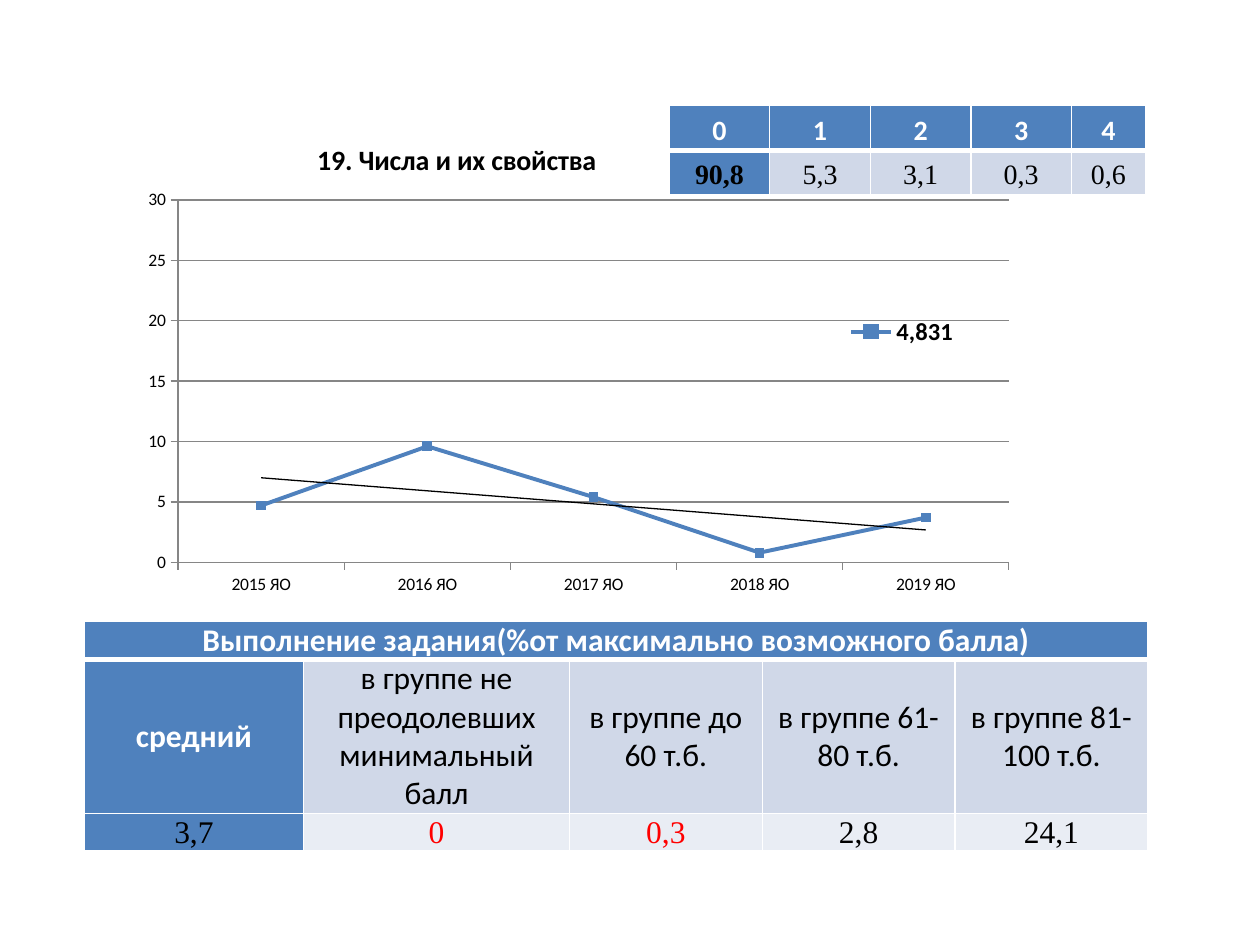
from pptx import Presentation
from pptx.chart.data import CategoryChartData
from pptx.dml.color import RGBColor
from pptx.enum.chart import XL_CHART_TYPE as ChartType
from pptx.enum.chart import XL_LEGEND_POSITION as LegendPosition
from pptx.enum.chart import XL_MARKER_STYLE as MarkerStyle
from pptx.enum.chart import XL_TICK_MARK as TickMark
from pptx.enum.text import MSO_ANCHOR as Anchor
from pptx.enum.text import PP_ALIGN as Align
from pptx.oxml import parse_xml
from pptx.oxml.ns import nsdecls, qn
from pptx.util import Cm, Pt

BLUE, PALE, PALER = "4F81BD", "D0D8E8", "E9EDF4"
WHITE, BLACK, RED, GREY = "FFFFFF", "000000", "FF0000", "868686"
SANS, SERIF = "Calibri", "Times New Roman"


def color(value):
    return RGBColor.from_string(value)


def set_font(font, fill, **values):
    for name, value in values.items():
        setattr(font, name, value)
    font.color.rgb = color(fill)


def set_borders(cell, bottom):
    """White edges, 1 pt wide except for the bottom one."""
    properties = cell._tc.get_or_add_tcPr()
    for index, (side, width) in enumerate(zip("LRTB", (1, 1, 1, bottom))):
        properties.insert(index, parse_xml(
            f'<a:ln{side} {nsdecls("a")} w="{Pt(width)}"><a:solidFill>'
            f'<a:srgbClr val="{WHITE}"/></a:solidFill></a:ln{side}>'))


def fill_cell(cell, text, fill, font, margins, spacing=None, bottom=1):
    cell.fill.solid()
    cell.fill.fore_color.rgb = color(fill)
    set_borders(cell, bottom)
    cell.vertical_anchor = Anchor.MIDDLE
    sides = ("left", "top", "right", "bottom")
    for side, margin in zip(sides, margins):
        setattr(cell, f"margin_{side}", Cm(margin))
    paragraph = cell.text_frame.paragraphs[0]
    paragraph.alignment = Align.CENTER
    if spacing:
        paragraph.line_spacing = spacing
    if text:
        run = paragraph.add_run()
        run.text = text
        set_font(run.font, **font)


def add_grid(slide, box, widths, heights):
    shape = slide.shapes.add_table(
        len(heights), len(widths), *[Cm(length) for length in box])
    table = shape.table
    for column, width in zip(table.columns, widths):
        column.width = Cm(width)
    for row, height in zip(table.rows, heights):
        row.height = Cm(height)
    return table


def add_score_table(slide, box):
    """Share of pupils for each number of points."""
    width, height = box[2:]
    last = 1.49
    table = add_grid(slide, box, [(width - last) / 4] * 4 + [last],
                     [height / 2] * 2)
    style = dict(margins=(0.18, 0, 0.18, 0), spacing=1.15)
    shares = ["90,8", "5,3", "3,1", "0,3", "0,6"]
    for index, share in enumerate(shares):
        first = index == 0
        fill_cell(table.cell(0, index), str(index), BLUE,
                  dict(fill=WHITE, name=SANS, size=Pt(16), bold=True),
                  bottom=3, **style)
        fill_cell(table.cell(1, index), share, BLUE if first else PALE,
                  dict(fill=BLACK, name=SERIF, size=Pt(16), bold=first),
                  **style)


def add_group_table(slide, box):
    """Result of the task in each group of pupils."""
    width, height = box[2:]
    line, first, second = 0.75, 4.42, 5.36
    others = [(width - first - second) / 3] * 3
    table = add_grid(slide, box, [first, second] + others,
                     [line, height - 2 * line, line])
    groups = [
        ("средний", "3,7", BLACK),
        ("в группе не преодолевших минимальный балл", "0", RED),
        ("в группе до 60 т.б.", "0,3", RED),
        ("в группе 61-80 т.б.", "2,8", BLACK),
        ("в группе 81-100 т.б.", "24,1", BLACK),
    ]
    heading = "Выполнение задания(%от максимально возможного балла)"
    wide, narrow = (0.18, 0, 0.18, 0), (0.02, 0.02, 0.02, 0)
    table.cell(0, 0).merge(table.cell(0, 4))
    for index, (group, result, result_color) in enumerate(groups):
        first = index == 0
        fill_cell(table.cell(0, index), heading if first else "", BLUE,
                  dict(fill=WHITE, name=SANS, size=Pt(18), bold=True),
                  wide, bottom=3)
        fill_cell(table.cell(1, index), group, BLUE if first else PALE,
                  dict(fill=WHITE if first else BLACK, name=SANS,
                       size=Pt(18), bold=first), wide)
        fill_cell(table.cell(2, index), result, BLUE if first else PALER,
                  dict(fill=result_color, name=SERIF, size=Pt(18),
                       bold=False), narrow)


def place(element, before, target="", **shares):
    """Set a manual chart layout, in shares of the chart's size."""
    for layout in element.findall(qn("c:layout")):
        element.remove(layout)
    modes = "".join(f'<c:{axis}Mode val="edge"/>' for axis in "xy")
    values = "".join(f'<c:{key} val="{share}"/>'
                     for key, share in shares.items())
    layout = parse_xml(f'<c:layout {nsdecls("c")}><c:manualLayout>{target}'
                       f'{modes}{values}</c:manualLayout></c:layout>')
    if before:
        element.find(qn(before)).addprevious(layout)
    else:
        element.insert(0, layout)


def format_axis(axis):
    axis.major_tick_mark = TickMark.OUTSIDE
    axis.minor_tick_mark = TickMark.NONE
    axis.format.line.color.rgb = color(GREY)
    axis.format.line.width = Pt(0.75)


def format_series(series):
    series.smooth = False
    series.format.line.color.rgb = color(BLUE)
    series.format.line.width = Pt(2.25)
    marker = series.marker
    marker.style, marker.size = MarkerStyle.SQUARE, 5
    for part in (marker.format.fill, marker.format.line.fill):
        part.solid()
        part.fore_color.rgb = color(BLUE)
    series._element.find(qn("c:cat")).addprevious(parse_xml(
        f'<c:trendline {nsdecls("c", "a")}><c:spPr><a:ln w="{Pt(0.75)}">'
        f'<a:solidFill><a:srgbClr val="{BLACK}"/></a:solidFill></a:ln>'
        '</c:spPr><c:trendlineType val="linear"/><c:dispRSqr val="0"/>'
        '<c:dispEq val="0"/></c:trendline>'))


def add_year_chart(slide, box):
    data = CategoryChartData(number_format="General")
    data.categories = [f"{year} ЯО" for year in range(2015, 2020)]
    data.add_series("4,831", [4.7, 9.6, 5.4, 0.8, 3.7])
    chart = slide.shapes.add_chart(
        ChartType.LINE_MARKERS, *[Cm(length) for length in box], data).chart
    set_font(chart.font, BLACK, name=SANS, size=Pt(10))
    chart.plots[0].vary_by_categories = False
    format_series(chart.plots[0].series[0])

    values = chart.value_axis
    values.minimum_scale, values.maximum_scale = 0, 30
    values.major_unit = 5
    values.has_major_gridlines = True
    values.major_gridlines.format.line.color.rgb = color(GREY)
    values.major_gridlines.format.line.width = Pt(0.75)
    for axis in (values, chart.category_axis):
        format_axis(axis)

    chart.has_title = True
    run = chart.chart_title.text_frame.paragraphs[0].add_run()
    run.text = "19. Числа и их свойства"
    set_font(run.font, BLACK, name=SANS, size=Pt(16), bold=True)
    place(chart.chart_title._element, "c:overlay", x=0.2, y=0.06)

    chart.has_legend = True
    legend = chart.legend
    legend.position = LegendPosition.RIGHT
    legend.include_in_layout = True
    set_font(legend.font, BLACK, name=SANS, size=Pt(14), bold=True)
    place(legend._element, "c:overlay", x=0.8, y=0.42, w=0.13, h=0.07)
    legend._element.find(qn("c:legendPos")).addnext(parse_xml(
        f'<c:legendEntry {nsdecls("c")}><c:idx val="1"/>'
        '<c:delete val="1"/></c:legendEntry>'))
    place(chart._chartSpace.chart.plotArea, None,
          '<c:layoutTarget val="inner"/>', x=0.05, y=0.19, w=0.93, h=0.73)


def main():
    presentation = Presentation()
    presentation.slide_width, presentation.slide_height = Cm(25.4), Cm(19.05)
    slide = presentation.slides.add_slide(presentation.slide_layouts[6])
    add_group_table(slide, (1.7, 12.52, 21.44, 4.6))
    add_year_chart(slide, (2.69, 2.13, 18.01, 10.01))
    add_score_table(slide, (13.49, 2.13, 9.6, 1.8))
    presentation.save("out.pptx")


if __name__ == "__main__":
    main()
